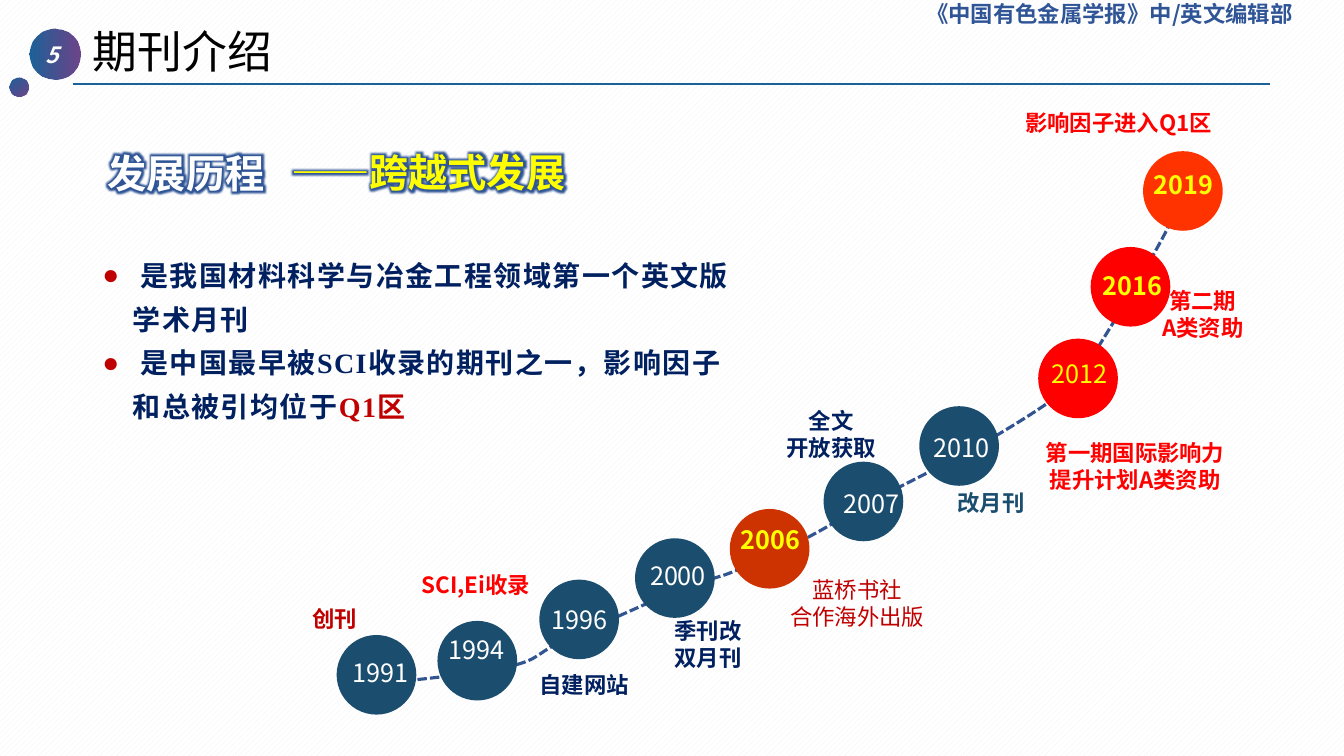
from dataclasses import dataclass

from lxml.etree import SubElement
from pptx import Presentation
from pptx.dml.color import RGBColor
from pptx.enum.dml import MSO_LINE, MSO_PATTERN
from pptx.enum.shapes import MSO_CONNECTOR, MSO_SHAPE
from pptx.enum.text import MSO_ANCHOR, MSO_AUTO_SIZE, PP_ALIGN
from pptx.oxml.ns import qn
from pptx.util import Inches, Pt

SLIDE_WIDTH, SLIDE_HEIGHT = Inches(13.33), Inches(7.5)
SANS, SERIF = "Noto Sans CJK SC", "Times New Roman"
BLACK, WHITE, YELLOW, RED, CRIMSON = "000000", "FFFFFF", "FFFF00", "FF0000", "C00000"
NAVY, TEAL, BLUE, PURPLE, INK = "002060", "1B4D6F", "1C6299", "5C307D", "2F5597"
CIRCLE_WIDTH, CIRCLE_HEIGHT = 5.93, 10.53
LINE_HEIGHT = 4.93


@dataclass(frozen=True)
class Area:
    left: float
    top: float
    width: float
    height: float

    def lengths(self):
        return across(self.left), down(self.top), across(self.width), down(self.height)


@dataclass(frozen=True)
class Style:
    size: float
    color: str
    bold: bool = False
    italic: bool = False
    font: str = SANS
    align: PP_ALIGN = PP_ALIGN.LEFT


@dataclass(frozen=True)
class Milestone:
    year: str
    left: float
    top: float
    year_shift: tuple[float, float]
    fill: str = TEAL
    color: str = WHITE
    bold: bool = False


@dataclass(frozen=True)
class Event:
    lines: tuple[str, ...]
    left: float
    top: float
    width: float
    color: str
    bold: bool = True


MILESTONES = [
    Milestone("1991", 25.05, 84, (0.45, 2.3)),
    Milestone("1994", 32.55, 82.13, (0.08, 1.1)),
    Milestone("1996", 40.13, 76.67, (0.15, 2.6)),
    Milestone("2000", 47.25, 71.2, (0.38, 2.27)),
    Milestone("2006", 54.3, 67.33, (0.08, 1.33), "CC3300", YELLOW, True),
    Milestone("2007", 61.28, 61.07, (0.75, 2.8)),
    Milestone("2010", 68.4, 53.73, (0.3, 2.8)),
    Milestone("2012", 77.25, 44.8, (0.23, 2), RED, YELLOW),
    Milestone("2016", 81.15, 32.67, (0.15, 2.4), RED, YELLOW, True),
    Milestone("2019", 85.05, 20, (0.05, 1.8), "FF3300", YELLOW, True),
]

EVENTS = [
    Event(("创刊",), 21.64, 79.33, 6.53, CRIMSON),
    Event(("SCI,Ei收录",), 30.08, 74.93, 10.65, RED),
    Event(("自建网站",), 36.8, 88.13, 13.35, NAVY),
    Event(("季刊改", "双月刊"), 47.05, 81, 11.25, NAVY),
    Event(("蓝桥书社", "合作海外出版"), 57.9, 75.6, 11.78, CRIMSON, False),
    Event(("全文", "开放获取"), 57.68, 53.2, 8.33, NAVY),
    Event(("改月刊",), 69.68, 64.05, 8.1, TEAL),
    Event(("第一期国际影响力提升计划A类资助",), 76.58, 57.47, 15.75, RED),
    Event(("第二期", "A类资助"), 84.7, 37.33, 9.6, RED),
    Event(("影响因子进入Q1区",), 75.25, 13.73, 15.98, RED),
]

CURVE_START = (28.28, 90.4)
CURVE = [
    ((31.95, 89.73), (35.63, 89.07), (37.95, 88.13)),
    ((40.2, 87.2), (39.9, 86.4), (41.85, 84.8)),
    ((43.8, 83.33), (47.48, 80.27), (49.5, 78.8)),
    ((51.53, 77.33), (52.8, 76.67), (54, 76)),
    ((55.2, 75.2), (56.55, 74.13), (56.55, 74.13)),
    ((57, 73.87), (55.95, 74.8), (56.7, 74.13)),
    ((57.38, 73.6), (59.48, 71.73), (60.68, 70.53)),
    ((61.95, 69.33), (62.03, 69.07), (64.05, 67.07)),
    ((66.15, 65.07), (70.58, 61.2), (73.13, 58.67)),
    ((75.68, 56), (78, 53.47), (79.43, 51.33)),
    ((80.85, 49.2), (80.4, 49.6), (81.68, 46)),
    ((82.95, 42.4), (86.18, 32.93), (87, 29.73)),
    ((87.9, 26.67), (87.38, 26.8), (86.85, 27.07)),
]


def across(share: float) -> int:
    return round(SLIDE_WIDTH * share / 100)


def down(share: float) -> int:
    return round(SLIDE_HEIGHT * share / 100)


def paint(target, color: str) -> None:
    target.rgb = RGBColor.from_string(color)


def format_paragraph(paragraph, style: Style) -> None:
    paragraph.alignment = style.align
    font = paragraph.font
    font.name, font.size = style.font, Pt(style.size)
    font.bold, font.italic = style.bold, style.italic
    font.fill.solid()
    paint(font.fill.fore_color, style.color)
    defaults = paragraph._p.pPr.find(qn("a:defRPr"))
    SubElement(defaults, qn("a:ea"), typeface=SANS)


def write_text(shape, lines: tuple[str, ...], style: Style) -> None:
    frame = shape.text_frame
    frame.word_wrap = True
    frame.auto_size = MSO_AUTO_SIZE.NONE
    frame.vertical_anchor = MSO_ANCHOR.TOP
    frame.text = "\n".join(lines)
    for paragraph in frame.paragraphs:
        format_paragraph(paragraph, style)


def add_text(slide, area: Area, lines: tuple[str, ...], style: Style):
    box = slide.shapes.add_textbox(*area.lengths())
    write_text(box, lines, style)
    return box


def add_circle(slide, area: Area):
    circle = slide.shapes.add_shape(MSO_SHAPE.OVAL, *area.lengths())
    circle.shadow.inherit = False
    circle.line.fill.background()
    return circle


def add_badge_circle(slide, area: Area, angle: float) -> None:
    circle = add_circle(slide, area)
    circle.fill.gradient()
    circle.fill.gradient_angle = angle
    for stop, color in zip(circle.fill.gradient_stops, (BLUE, PURPLE)):
        paint(stop.color, color)
    end_color = circle.element.xpath(".//a:gs[2]/a:srgbClr")[0]
    SubElement(end_color, qn("a:alpha"), val="90000")


def add_glowing_heading(slide, area: Area, text: str, color: str) -> None:
    box = add_text(slide, area, (text,), Style(28, color, True))
    properties = box.text_frame.paragraphs[0].runs[0]._r.get_or_add_rPr()
    glow = SubElement(SubElement(properties, qn("a:effectLst")), qn("a:glow"), rad="101600")
    SubElement(glow, qn("a:srgbClr"), val=INK)


def add_header(slide) -> None:
    background = slide.background.fill
    background.patterned()
    background.pattern = MSO_PATTERN.WIDE_UPWARD_DIAGONAL
    paint(background.fore_color, "F2F2F2")
    paint(background.back_color, WHITE)
    title = slide.shapes.title
    title.left, title.top, title.width, title.height = Area(6.15, 2.5, 30, 8.53).lengths()
    write_text(title, ("期刊介绍",), Style(32, BLACK))
    rule = slide.shapes.add_connector(
        MSO_CONNECTOR.STRAIGHT, across(5.4), down(11.12), across(94.5), down(11.12))
    paint(rule.line.color, BLUE)
    rule.line.width = Pt(1.75)
    SubElement(rule.element.spPr, qn("a:effectLst"))
    add_badge_circle(slide, Area(2.18, 3.73, 3.83, 6.8), 0)
    add_badge_circle(slide, Area(0.72, 10.27, 1.43, 2.53), 310)
    add_text(slide, Area(1.13, 4.8, 5.55, LINE_HEIGHT), ("5",),
             Style(16, WHITE, True, True, align=PP_ALIGN.CENTER))
    add_text(slide, Area(68.18, -0.67, 31.8, 8.53), ("《中国有色金属学报》中/英文编辑部",),
             Style(16, INK, True))


def add_facts(slide) -> None:
    body = slide.placeholders[1]
    body.left, body.top, body.width, body.height = Area(6.87, 32.2, 48.23, 24.67).lengths()
    write_facts = Style(20, NAVY, True, font=SERIF)
    frame = body.text_frame
    frame.auto_size = MSO_AUTO_SIZE.NONE
    frame.text = "\n".join((" 是我国材料科学与冶金工程领域第一个英文版学术月刊",
                            " 是中国最早被SCI收录的期刊之一，影响因子和总被引均位于"))
    for paragraph in frame.paragraphs:
        properties = paragraph._p.get_or_add_pPr()
        properties.set("marL", str(Inches(0.3)))
        properties.set("indent", str(-Inches(0.3)))
        SubElement(SubElement(properties, qn("a:buClr")), qn("a:srgbClr"), val=CRIMSON)
        SubElement(properties, qn("a:buChar"), char="●")
        format_paragraph(paragraph, write_facts)
        paragraph.line_spacing = 1.3
        paragraph.space_before = Pt(0)
        properties.find(qn("a:defRPr")).set("spc", "100")
    quartile = frame.paragraphs[-1].add_run()
    quartile.text = "Q1区"
    paint(quartile.font.color, CRIMSON)


def add_curve(slide) -> None:
    builder = slide.shapes.build_freeform(across(CURVE_START[0]), down(CURVE_START[1]))
    builder.add_line_segments(
        [(across(x), down(y)) for segment in CURVE for x, y in segment], close=False)
    curve = builder.convert_to_shape()
    outline = curve.element.xpath(".//a:path")[0]
    steps = outline.findall(qn("a:lnTo"))
    for first in range(0, len(steps), 3):
        bend = SubElement(outline, qn("a:cubicBezTo"))
        for step in steps[first:first + 3]:
            bend.append(step[0])
            outline.remove(step)
    curve.shadow.inherit = False
    curve.fill.background()
    paint(curve.line.color, "325491")
    curve.line.width = Pt(2.25)
    curve.line.dash_style = MSO_LINE.SQUARE_DOT


def add_timeline(slide) -> None:
    add_curve(slide)
    for milestone in MILESTONES:
        circle = add_circle(
            slide, Area(milestone.left, milestone.top, CIRCLE_WIDTH, CIRCLE_HEIGHT))
        circle.fill.solid()
        paint(circle.fill.fore_color, milestone.fill)
        shift_x, shift_y = milestone.year_shift
        area = Area(milestone.left + shift_x, milestone.top + shift_y, CIRCLE_WIDTH, 5.33)
        year = add_text(slide, area, (milestone.year,),
                        Style(18, milestone.color, milestone.bold))
        year.text_frame.margin_right = 0
    for event in EVENTS:
        area = Area(event.left, event.top, event.width, LINE_HEIGHT * len(event.lines))
        add_text(slide, area, event.lines,
                 Style(16, event.color, event.bold, align=PP_ALIGN.CENTER))


def main() -> None:
    presentation = Presentation()
    presentation.slide_width, presentation.slide_height = SLIDE_WIDTH, SLIDE_HEIGHT
    slide = presentation.slides.add_slide(presentation.slide_layouts[1])
    add_header(slide)
    add_glowing_heading(slide, Area(7.28, 19.07, 15, 8.8), "发展历程", WHITE)
    add_glowing_heading(slide, Area(20.93, 18.93, 28, 8.8), "——跨越式发展", YELLOW)
    add_facts(slide)
    add_timeline(slide)
    presentation.save("out.pptx")


if __name__ == "__main__":
    main()
